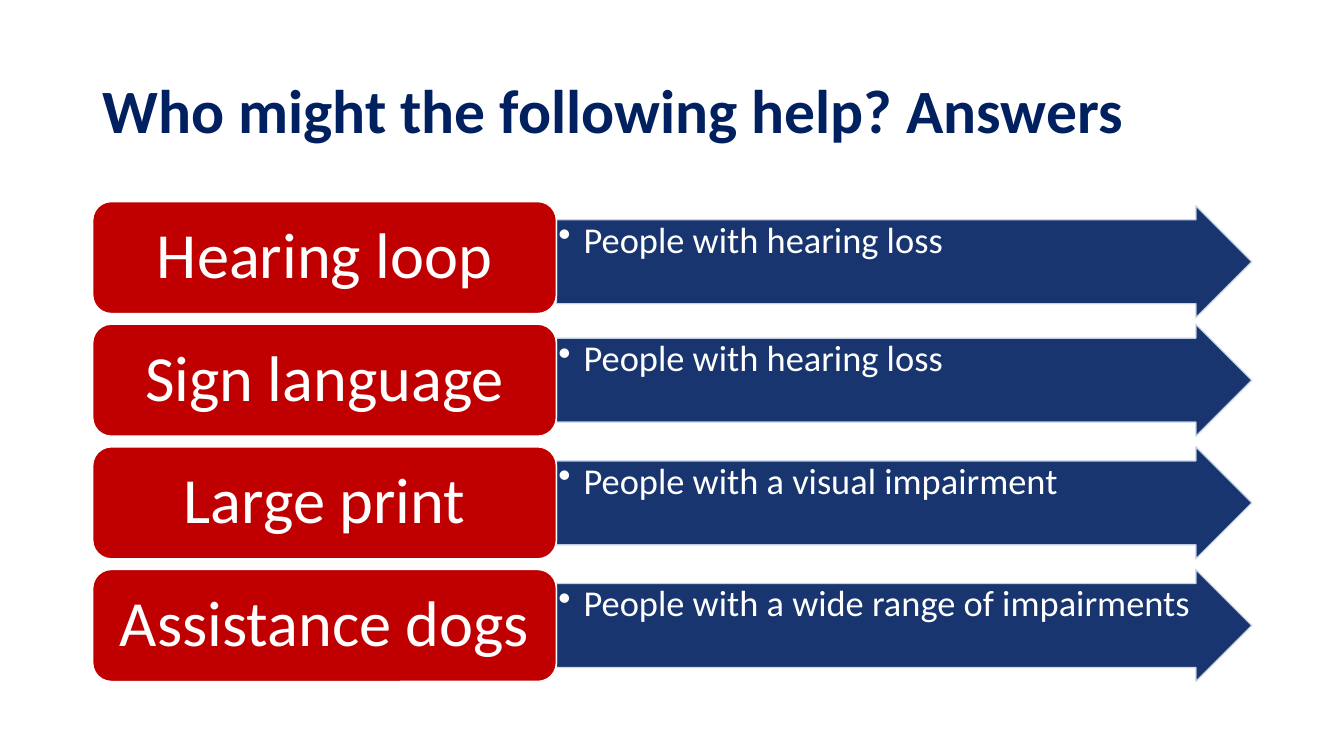
import pptx
import pptx.dml.color
import pptx.enum.shapes
import pptx.enum.text
import pptx.oxml
import pptx.oxml.ns
import pptx.util

Pt = pptx.util.Pt
SHAPES = pptx.enum.shapes.MSO_SHAPE
ANCHOR = pptx.enum.text.MSO_ANCHOR
ALIGN = pptx.enum.text.PP_ALIGN

COLORS = {"navy": "002060", "red": "C00000", "pale": "D2DEEF", "white": "FFFFFF"}
LEFT, TOP, PITCH, ROW_HEIGHT = 66.24, 144, 87.6, 80
LABEL_WIDTH, ARROW_WIDTH = 331.2, 496.8
FIRST_ARROW_DROP = 3
ROWS = [
    ("Hearing loop", "People with hearing loss"),
    ("Sign language", "People with hearing loss"),
    ("Large print", "People with a visual impairment"),
    ("Assistance dogs", "People with a wide range of impairments"),
]


def write(shape, text, size, color, anchor, align, margins=(7.2, 3.6)):
    """Put one paragraph in the shape; margins are horizontal and vertical."""
    frame = shape.text_frame
    frame.word_wrap = True
    frame.vertical_anchor = anchor
    frame.margin_left = frame.margin_right = Pt(margins[0])
    frame.margin_top = frame.margin_bottom = Pt(margins[1])
    paragraph = frame.paragraphs[0]
    paragraph.text = text
    paragraph.alignment = align
    paragraph.line_spacing = 0.9
    paragraph.font.name = "Calibri"
    paragraph.font.size = Pt(size)
    paragraph.font.color.rgb = pptx.dml.color.RGBColor.from_string(COLORS[color])
    return paragraph


def add_block(preset, left, top, width, fill, line):
    block = slide.shapes.add_shape(preset, Pt(left), Pt(top), Pt(width), Pt(ROW_HEIGHT))
    block.shadow.inherit = False
    block.fill.solid()
    block.fill.fore_color.rgb = pptx.dml.color.RGBColor.from_string(COLORS[fill])
    block.line.color.rgb = pptx.dml.color.RGBColor.from_string(COLORS[line])
    block.line.width = Pt(1)
    return block


presentation = pptx.Presentation()
presentation.slide_width = Pt(960)
presentation.slide_height = Pt(540)
slide = presentation.slides.add_slide(presentation.slide_layouts[6])

title = slide.shapes.add_textbox(Pt(LEFT), Pt(28.8), Pt(828), Pt(104.4))
heading = write(title, "Who might the following help? Answers", 44, "navy", ANCHOR.MIDDLE, ALIGN.LEFT)
heading.font.bold = True

for row, (aid, people) in enumerate(ROWS):
    top = TOP + row * PITCH
    arrow_top = top + (FIRST_ARROW_DROP if row == 0 else 0)

    arrow = add_block(SHAPES.RIGHT_ARROW, LEFT + LABEL_WIDTH, arrow_top, ARROW_WIDTH, "navy", "pale")
    arrow.adjustments[0] = 0.75
    arrow.adjustments[1] = 0.5
    for color in arrow._element.spPr.iter(pptx.oxml.ns.qn("a:srgbClr")):
        color.append(pptx.oxml.parse_xml(f'<a:alpha {pptx.oxml.ns.nsdecls("a")} val="90000"/>'))

    answer = write(arrow, people, 26, "white", ANCHOR.TOP, ALIGN.LEFT, (1.44, 1.44))
    answer.level = 1
    properties = answer._p.get_or_add_pPr()
    properties.set("marL", str(Pt(18)))
    properties.set("indent", str(-Pt(18)))
    properties.append(pptx.oxml.parse_xml(f'<a:buChar {pptx.oxml.ns.nsdecls("a")} char="•"/>'))
    # The schema wants the bullet ahead of the default run properties.
    properties.append(properties.find(pptx.oxml.ns.qn("a:defRPr")))

    label = add_block(SHAPES.ROUNDED_RECTANGLE, LEFT, top, LABEL_WIDTH, "red", "white")
    write(label, aid, 46, "white", ANCHOR.MIDDLE, ALIGN.CENTER, (13.68, 7.2))

presentation.save("out.pptx")
